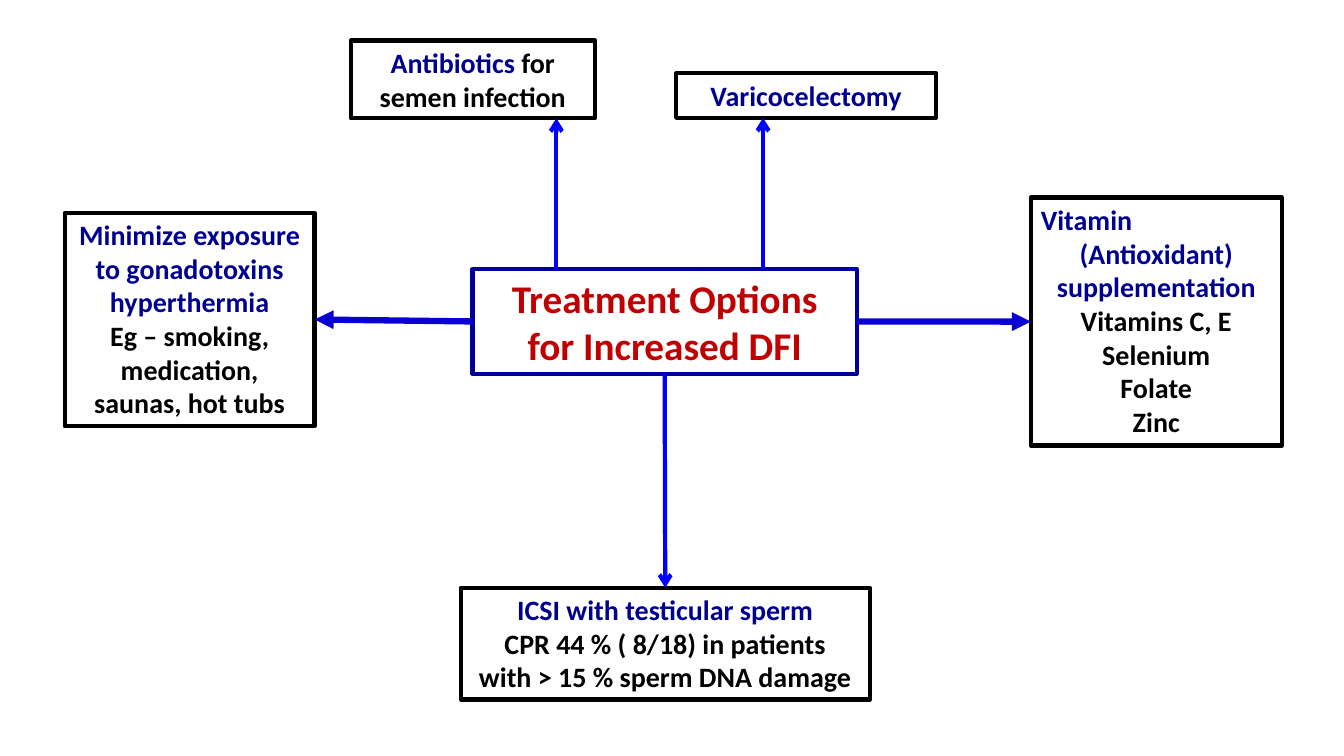
from pptx import Presentation
from pptx.dml.color import RGBColor
from pptx.enum.shapes import MSO_CONNECTOR as Connector, MSO_SHAPE as Shape
from pptx.enum.text import MSO_ANCHOR as Anchor, MSO_AUTO_SIZE as AutoSize, PP_ALIGN as Align
from pptx.oxml.ns import qn
from pptx.util import Cm, Pt
from lxml.etree import SubElement

NAVY, DARK_NAVY, BLACK, RED = "000090", "000099", "000000", "C00000"
BLUE, ROYAL = "0000FF", "0B00D4"
TOP, LEFT, BOTTOM, RIGHT = range(4)


def color(hex_text):
    return RGBColor.from_string(hex_text)


def add_run(paragraph, text, size=20, ink=BLACK, bold=True):
    run = paragraph.add_run()
    run.text = text
    run.font.name = "Calibri"
    run.font.size = Pt(size)
    run.font.bold = bold
    run.font.color.rgb = color(ink)


def add_box(slide, box, paragraphs, border=BLACK, size=20, first_align=Align.CENTER):
    """Outlined box; each paragraph is a list of (text, colour) runs."""
    shape = slide.shapes.add_shape(Shape.RECTANGLE, *map(Cm, box))
    shape.shadow.inherit = False
    shape.fill.background()
    shape.line.color.rgb = color(border)
    shape.line.width = Pt(3)
    frame = shape.text_frame
    frame.word_wrap = True
    frame.auto_size = AutoSize.SHAPE_TO_FIT_TEXT
    frame.vertical_anchor = Anchor.TOP
    for index, runs in enumerate(paragraphs):
        paragraph = frame.add_paragraph() if index else frame.paragraphs[0]
        paragraph.alignment = Align.CENTER if index else first_align
        for text, ink in runs:
            add_run(paragraph, text, size=size, ink=ink)
    return shape


def add_arrow(slide, start=(0, 0), end=(0, 0), ink=BLUE, width=3, head="arrow"):
    connector = slide.shapes.add_connector(Connector.STRAIGHT, *start, *end)
    connector.line.color.rgb = color(ink)
    connector.line.width = Pt(width)
    SubElement(connector.line._get_or_add_ln(), qn("a:tailEnd"), type=head)
    SubElement(connector._element.spPr, qn("a:effectLst"))
    return connector


def join(slide, source, source_side, target, target_side, **style):
    connector = add_arrow(slide, **style)
    connector.begin_connect(source, source_side)
    connector.end_connect(target, target_side)


def rise(slide, source, target, x):
    """Vertical arrow from the top of source to the bottom of target."""
    add_arrow(slide, (Cm(x), source.top), (Cm(x), target.top + target.height))


def treatment_map(slide, box):
    left, top, width, height = box

    def place(x, y, w, h):
        return left + x, top + y, w, h

    # Central topic
    topic = add_box(slide, place(11.91, 6.78, 9.68, 2.64),
                    [[("Treatment Options", RED)], [("for Increased DFI", RED)]],
                    border=DARK_NAVY, size=28)

    # Options around it
    exposure = add_box(slide, place(1.63, 5.36, 6.3, 5.38), [
        [("Minimize exposure to gonadotoxins hyperthermia", NAVY)],
        [("Eg – smoking, medication, saunas, hot tubs", BLACK)]])
    antibiotics = add_box(slide, place(8.84, 1.02, 6.15, 1.96), [
        [("Antibiotics ", NAVY), ("for semen infection", BLACK)]])
    nutrients = ["Vitamins C, E", "Selenium", "Folate", "Zinc"]
    vitamins = add_box(slide, place(25.98, 4.98, 6.32, 6.25), [
        [("Vitamin", NAVY)], [("(Antioxidant) supplementation", NAVY)],
        *[[(name, BLACK)] for name in nutrients]], first_align=Align.LEFT)
    varicocelectomy = add_box(slide, place(17.04, 1.85, 6.55, 1.12),
                              [[("Varicocelectomy", NAVY)]])
    icsi = add_box(slide, place(11.61, 14.81, 10.31, 2.82), [
        [("ICSI with testicular sperm", NAVY)],
        [("CPR 44 % ( 8/18) in patients", BLACK)],
        [("with > 15 % sperm DNA damage", BLACK)]])

    # Arrows
    join(slide, topic, BOTTOM, icsi, TOP)
    rise(slide, topic, varicocelectomy, left + 19.23)
    rise(slide, topic, antibiotics, left + 14.02)
    bold_arrow = dict(ink=ROYAL, width=4.5, head="triangle")
    join(slide, topic, LEFT, exposure, RIGHT, **bold_arrow)
    join(slide, topic, RIGHT, vitamins, LEFT, **bold_arrow)


def main():
    presentation = Presentation()
    presentation.slide_width = Cm(33.87)
    presentation.slide_height = Cm(19.05)
    slide = presentation.slides.add_slide(presentation.slide_layouts[6])
    treatment_map(slide, (0, 0, 33.87, 19.05))
    presentation.save("out.pptx")


if __name__ == "__main__":
    main()
